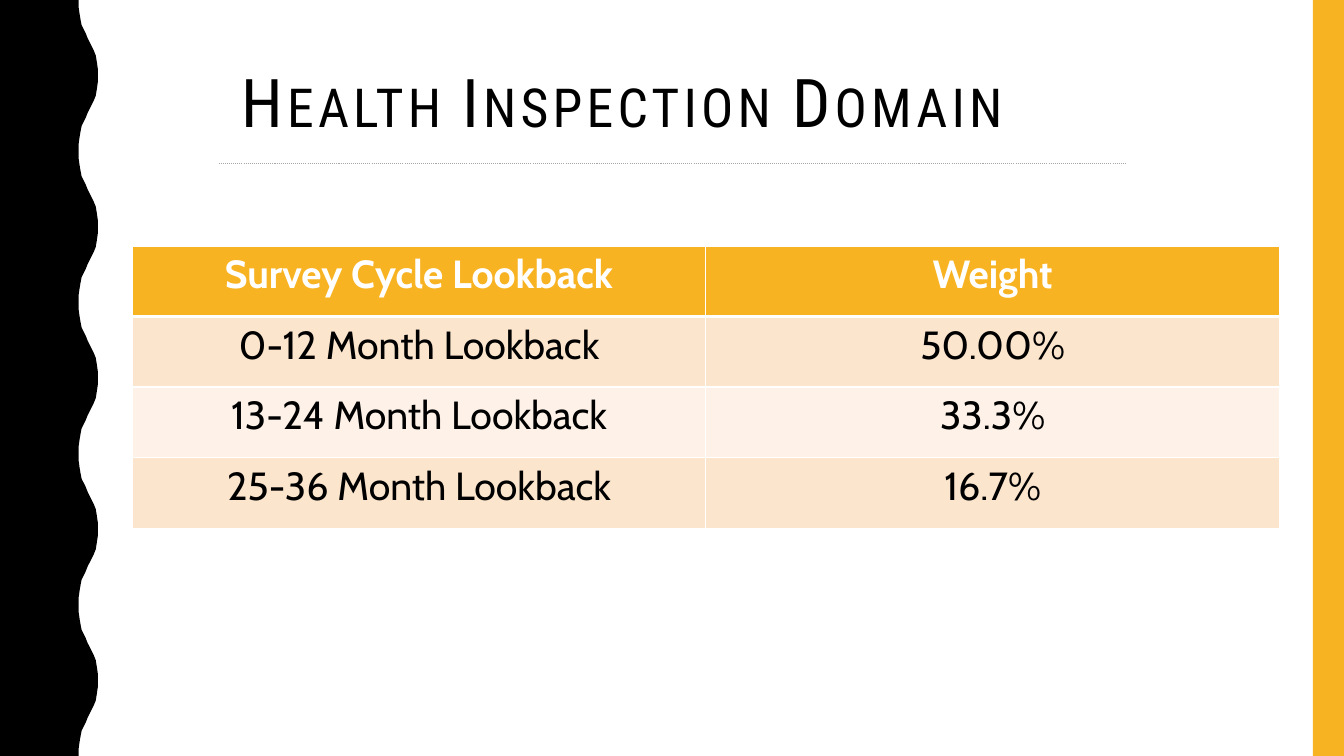
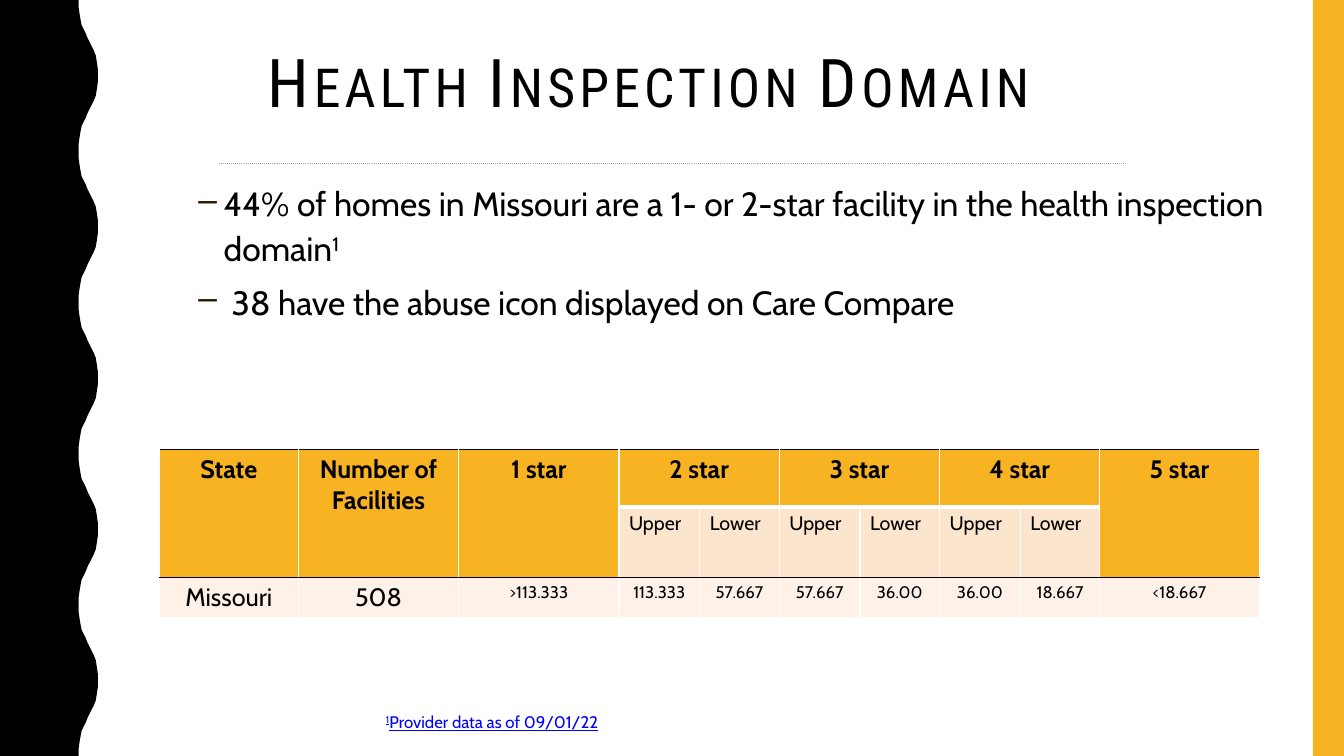
from lxml.etree import SubElement
from pptx import Presentation
from pptx.dml.color import RGBColor
from pptx.enum.dml import MSO_LINE
from pptx.enum.shapes import MSO_CONNECTOR, MSO_SHAPE
from pptx.enum.text import MSO_ANCHOR as ANCHOR, PP_ALIGN as ALIGN
from pptx.oxml.ns import qn
from pptx.util import Pt

PX = 9144  # EMU per px, 100 px to the inch
WIDTH, HEIGHT = 1333, 750

BLACK, WHITE, GOLD = "000000", "FFFFFF", "F8B323"
PEACH, CREAM = "FCE5CD", "FEF2E8"
GREY, BROWN, BLUE = "A6A6A6", "2A1A00", "0000FF"
HEAD_FONT, BODY_FONT = "Roboto Condensed", "Cabin"

# Half a wave of the left band, from its trough to its crest
HALF_WAVE = [(78, 0), (78, 7), (79, 14), (80, 20), (81, 25), (83, 29), (85, 33),
             (87, 38), (89, 42), (91, 46), (93, 50), (95, 55), (96, 61),
             (97, 68), (97, 75)]
WAVE_LENGTH = 150

THIN_WHITE, THICK_WHITE, THIN_BLACK = (WHITE, 1), (WHITE, 3), (BLACK, 1)


def rgb(color):
    return RGBColor.from_string(color)


def add_text(p, text, size=24, font=BODY_FONT, color=BLACK, bold=False,
             underline=False, **attrs):
    """Add a run; attrs are further run properties, such as baseline or cap."""
    r = p.add_run()
    r.text = text
    f = r.font
    f.size, f.name, f.bold, f.underline = Pt(size), font, bold, underline
    f.color.rgb = rgb(color)
    for name, value in attrs.items():
        f._element.set(name, str(value))


def set_border(cell, edge, color, width):
    ln = SubElement(cell._tc.get_or_add_tcPr(), qn(f"a:ln{edge}"), w=str(Pt(width)))
    SubElement(SubElement(ln, qn("a:solidFill")), qn("a:srgbClr"), val=color)


class Deck:
    def __init__(self):
        self.prs = Presentation()
        self.prs.slide_width, self.prs.slide_height = WIDTH * PX, HEIGHT * PX

    def new_slide(self, title, x, y, w, h):
        self.slide = self.prs.slides.add_slide(self.prs.slide_layouts[6])
        self.shapes = self.slide.shapes
        self.wave_band()
        self.paint(self.shapes.add_shape(
            MSO_SHAPE.RECTANGLE, 1302 * PX, 0, 31 * PX, HEIGHT * PX), GOLD)
        self.dotted_rule(217, 1117, 162)
        tf = self.text_box(x, y, w, h)
        tf.vertical_anchor = ANCHOR.MIDDLE
        p = tf.paragraphs[0]
        p.alignment, p.line_spacing = ALIGN.CENTER, 0.9
        add_text(p, title, size=48, font=HEAD_FONT, spc=300, cap="small")

    def paint(self, sp, color):
        sp.shadow.inherit = False
        sp.fill.solid()
        sp.fill.fore_color.rgb = rgb(color)
        sp.line.fill.background()

    def wave_band(self):
        fall = [(x, WAVE_LENGTH - y) for x, y in reversed(HALF_WAVE[:-1])]
        edge = [(x, top + y) for top in range(0, HEIGHT, WAVE_LENGTH)
                for x, y in HALF_WAVE + fall]
        outline = self.shapes.build_freeform(0, 0, scale=PX)
        outline.add_line_segments(edge + [(0, HEIGHT)], close=True)
        self.paint(outline.convert_to_shape(), BLACK)

    def dotted_rule(self, x1, x2, y):
        rule = self.shapes.add_connector(
            MSO_CONNECTOR.STRAIGHT, x1 * PX, y * PX, x2 * PX, y * PX)
        rule.line.color.rgb = rgb(GREY)
        rule.line.width = Pt(0.75)
        rule.line.dash_style = MSO_LINE.ROUND_DOT
        SubElement(rule._element.spPr, qn("a:effectLst"))

    def text_box(self, x, y, w, h):
        tf = self.shapes.add_textbox(x * PX, y * PX, w * PX, h * PX).text_frame
        tf.word_wrap = True
        return tf

    def dash_item(self, p, indent, before=0):
        """Give the paragraph a dash at 50 px and its text at the indent."""
        p.line_spacing, p.space_before = 1.1, Pt(before)
        pPr = p._p.get_or_add_pPr()
        pPr.set("marL", str(indent * PX))
        pPr.set("indent", str((50 - indent) * PX))
        SubElement(SubElement(pPr, qn("a:buClr")), qn("a:srgbClr"), val=BROWN)
        SubElement(pPr, qn("a:buChar"), char="–")

    def table(self, x, y, cols, rows):
        table = self.shapes.add_table(
            len(rows), len(cols), x * PX, y * PX, sum(cols) * PX, sum(rows) * PX).table
        table.first_row = table.horz_banding = False
        for col, width in zip(table.columns, cols):
            col.width = width * PX
        for row, height in zip(table.rows, rows):
            row.height = height * PX
        return table

    def cell(self, table, row, col, text, fill, rows=1, cols=1, align=ALIGN.CENTER,
             top=THIN_WHITE, bottom=THIN_WHITE, **fmt):
        """Fill a cell that spans the given rows and columns."""
        first = table.cell(row, col)
        if rows * cols > 1:
            first.merge(table.cell(row + rows - 1, col + cols - 1))
        for r in range(row, row + rows):
            for c in range(col, col + cols):
                cell = table.cell(r, c)
                for edge, line in zip("LRTB", (THIN_WHITE, THIN_WHITE, top, bottom)):
                    set_border(cell, edge, *line)
                cell.fill.solid()
                cell.fill.fore_color.rgb = rgb(fill)
        p = first.text_frame.paragraphs[0]
        p.alignment = align
        add_text(p, text, **fmt)


def weights_slide(deck):
    deck.new_slide("Health Inspection Domain", 117, 25, 1100, 159)
    lookbacks = [("Survey Cycle Lookback", "Weight"),
                 ("0-12 Month Lookback", "50.00%"),
                 ("13-24 Month Lookback", "33.3%"),
                 ("25-36 Month Lookback", "16.7%")]
    table = deck.table(131, 244, [569] * 2, [70] * 4)
    for r, texts in enumerate(lookbacks):
        for c, text in enumerate(texts):
            if r == 0:
                deck.cell(table, r, c, text, GOLD, bottom=THICK_WHITE,
                          size=28, color=WHITE, bold=True)
            else:
                deck.cell(table, r, c, text, PEACH if r % 2 else CREAM, size=28,
                          top=THICK_WHITE if r == 1 else THIN_WHITE)


def stars_slide(deck):
    deck.new_slide("Health Inspection Domain", 137, 19, 1113, 132)

    tf = deck.text_box(137, 173, 1137, 470)
    p = tf.paragraphs[0]
    deck.dash_item(p, 75)
    add_text(p, "44% of homes in Missouri are a 1- or 2-star facility "
                "in the health inspection domain")
    add_text(p, "1", baseline=30000)
    p = tf.add_paragraph()
    deck.dash_item(p, 83, before=7)
    add_text(p, "38 have the abuse icon displayed on Care Compare")

    p = deck.text_box(373, 701, 722, 30).paragraphs[0]
    link = dict(size=12, color=BLUE, underline=True)
    add_text(p, "1", baseline=30000, **link)
    add_text(p, "Provider data as of 09/01/22", **link)

    table = deck.table(158, 446, [138, 159, 159] + [80, 79] * 3 + [158], [57, 70, 40])
    head = dict(size=18, bold=True, top=THIN_BLACK)
    tall_heads = {0: "State", 1: "Number of Facilities", 2: "1 star", 9: "5 star"}
    for c, text in tall_heads.items():
        deck.cell(table, 0, c, text, GOLD, rows=2, bottom=THIN_BLACK, **head)
    for c, text in zip((3, 5, 7), ("2 star", "3 star", "4 star")):
        deck.cell(table, 0, c, text, GOLD, cols=2, bottom=THICK_WHITE, **head)
        for side, bound in enumerate(("Upper", "Lower")):
            deck.cell(table, 1, c + side, bound, PEACH, align=ALIGN.LEFT,
                      top=THICK_WHITE, bottom=THIN_BLACK, size=14)
    values = ["Missouri", "508", ">113.333", "113.333", "57.667", "57.667",
              "36.00", "36.00", "18.667", "<18.667"]
    for c, text in enumerate(values):
        deck.cell(table, 2, c, text, CREAM, top=THIN_BLACK, size=18 if c < 2 else 12)


def main():
    deck = Deck()
    weights_slide(deck)
    stars_slide(deck)
    deck.prs.save("out.pptx")


if __name__ == "__main__":
    main()
